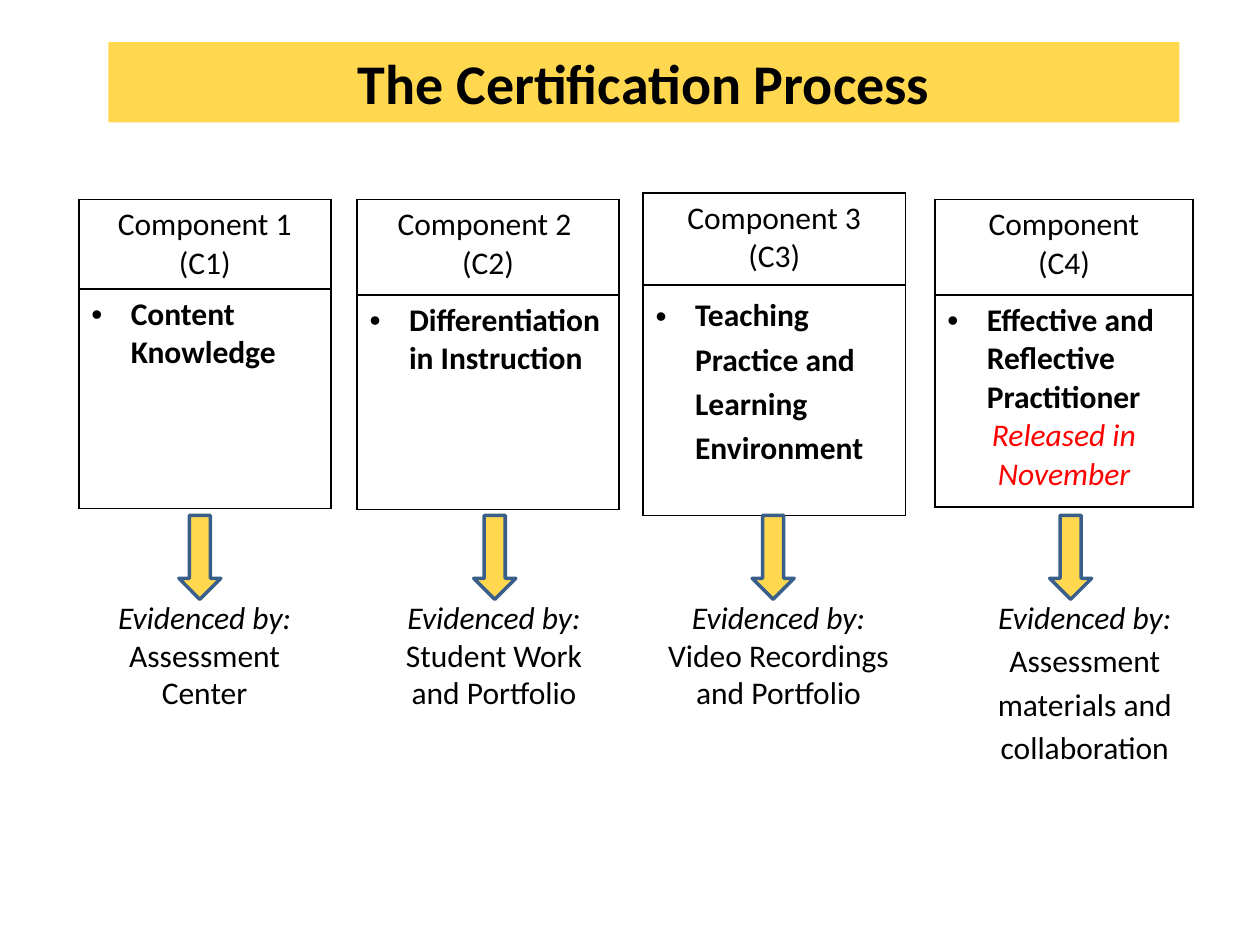
from dataclasses import dataclass

from lxml.etree import SubElement
from pptx import Presentation
from pptx.dml.color import RGBColor
from pptx.enum.shapes import MSO_SHAPE
from pptx.enum.text import MSO_ANCHOR, PP_ALIGN
from pptx.oxml import parse_xml
from pptx.oxml.ns import nsdecls, qn
from pptx.util import Pt


@dataclass(frozen=True)
class Theme:
    font: str = "Calibri"
    title_size: float = 32
    body_size: float = 18
    gold: RGBColor = RGBColor(0xFF, 0xD8, 0x50)
    blue: RGBColor = RGBColor(0x39, 0x5E, 0x89)
    black: RGBColor = RGBColor(0, 0, 0)
    red: RGBColor = RGBColor(0xFF, 0, 0)
    bullet_indent: float = 22.5


THEME = Theme()


@dataclass(frozen=True)
class Component:
    heading: str
    code: str
    focus: str
    evidence: list
    table: tuple  # left, top, width
    rows: tuple  # row heights
    arrow_left: float
    caption: tuple  # left, top, width, height
    focus_spacing: float = 1.0
    evidence_spacing: float = 1.0
    note: str = ""


COMPONENTS = [
    Component("Component 1", "(C1)", "Content Knowledge", ["Assessment Center"],
              (45, 114, 144), (46.1, 125.3), 102.2, (42, 338, 149.8, 72.7)),
    Component("Component 2 ", "(C2)", "Differentiation in Instruction",
              ["Student Work", "and Portfolio"],
              (204, 114, 149.8), (54.7, 122.4), 270.7, (207.4, 338, 149.8, 72.7)),
    Component("Component 3", "(C3)", "Teaching Practice and Learning Environment",
              ["Video Recordings and Portfolio"],
              (367.5, 110.2, 149.8), (52.6, 131.8), 429.8, (372.2, 338, 145.4, 72.7),
              focus_spacing=1.15),
    Component("Component", "(C4)", "Effective and Reflective Practitioner",
              ["Assessment materials and collaboration"],
              (534.2, 114, 147.6), (54.7, 121), 599.8, (545, 338, 149.8, 106.6),
              evidence_spacing=1.15, note="Released in November"),
]


def write_lines(tf, lines):
    """Fill a text frame with one centred paragraph per line."""
    tf.word_wrap = True
    tf.text = "\n".join(lines)
    for p in tf.paragraphs:
        style(p)


def style(p, size=THEME.body_size, color=THEME.black, bold=False, italic=False,
          align=PP_ALIGN.CENTER):
    p.alignment = align
    for r in p.runs:
        r.font.name = THEME.font
        r.font.size = Pt(size)
        r.font.bold = bold
        r.font.italic = italic
        r.font.color.rgb = color


def add_bullet(p):
    pPr = p._p.get_or_add_pPr()
    indent = Pt(THEME.bullet_indent)
    pPr.set("marL", str(indent))
    pPr.set("indent", str(-indent))
    color = SubElement(pPr, qn("a:buClr"))
    SubElement(color, qn("a:srgbClr")).set("val", str(THEME.black))
    SubElement(pPr, qn("a:buFont")).set("typeface", "Arial")
    SubElement(pPr, qn("a:buChar")).set("char", "•")


def outline_cell(cell):
    cell.fill.background()
    tcPr = cell._tc.get_or_add_tcPr()
    for i, side in enumerate(("lnL", "lnR", "lnT", "lnB")):
        tcPr.insert(i, parse_xml(
            f'<a:{side} {nsdecls("a")} w="{Pt(1)}"><a:solidFill>'
            f'<a:srgbClr val="{THEME.black}"/></a:solidFill></a:{side}>'))


def add_filled_shape(slide, kind, left, top, width, height):
    s = slide.shapes.add_shape(kind, Pt(left), Pt(top), Pt(width), Pt(height))
    s.shadow.inherit = False
    s.fill.solid()
    s.fill.fore_color.rgb = THEME.gold
    s.line.fill.background()
    return s


def add_title(slide, text):
    s = add_filled_shape(slide, MSO_SHAPE.RECTANGLE, 62, 24, 612, 46)
    tf = s.text_frame
    tf.text = text
    tf.vertical_anchor = MSO_ANCHOR.MIDDLE
    style(tf.paragraphs[0], size=THEME.title_size, bold=True)


def add_component_table(slide, c):
    left, top, width = c.table
    frame = slide.shapes.add_table(2, 1, Pt(left), Pt(top), Pt(width), Pt(sum(c.rows)))
    table = frame.table
    table.first_row = table.horz_banding = False
    for row, height in zip(table.rows, c.rows):
        row.height = Pt(height)
        outline_cell(row.cells[0])

    write_lines(table.cell(0, 0).text_frame, [c.heading, c.code])
    tf = table.cell(1, 0).text_frame
    write_lines(tf, [c.focus] + ([c.note] if c.note else []))
    p = tf.paragraphs[0]
    style(p, bold=True, align=PP_ALIGN.LEFT)
    p.line_spacing = c.focus_spacing
    add_bullet(p)
    if c.note:
        style(tf.paragraphs[1], color=THEME.red, italic=True)


def add_arrow(slide, left):
    s = add_filled_shape(slide, MSO_SHAPE.DOWN_ARROW, left, 294.5, 24, 48)
    s.line.color.rgb = THEME.blue
    s.line.width = Pt(2)


def add_evidence(slide, c):
    s = slide.shapes.add_textbox(*(Pt(v) for v in c.caption))
    tf = s.text_frame
    write_lines(tf, ["Evidenced by:"] + c.evidence)
    style(tf.paragraphs[0], italic=True)
    for p in tf.paragraphs[1:]:
        p.line_spacing = c.evidence_spacing


def main():
    prs = Presentation()
    prs.slide_width, prs.slide_height = Pt(720), Pt(540)
    slide = prs.slides.add_slide(prs.slide_layouts[6])

    # Title band
    add_title(slide, "The Certification Process")

    # One column per component: table, arrow, evidence
    for c in COMPONENTS:
        add_component_table(slide, c)
        add_arrow(slide, c.arrow_left)
        add_evidence(slide, c)

    prs.save("out.pptx")


if __name__ == "__main__":
    main()
